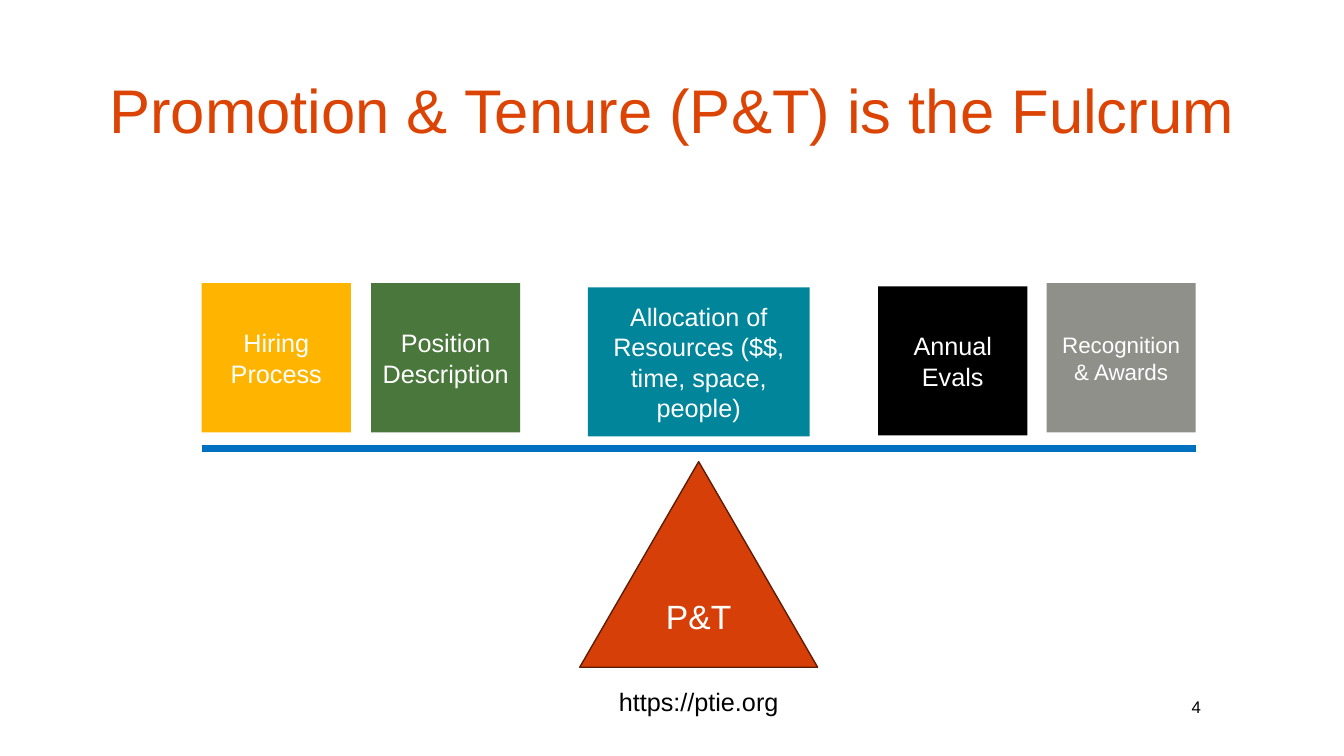
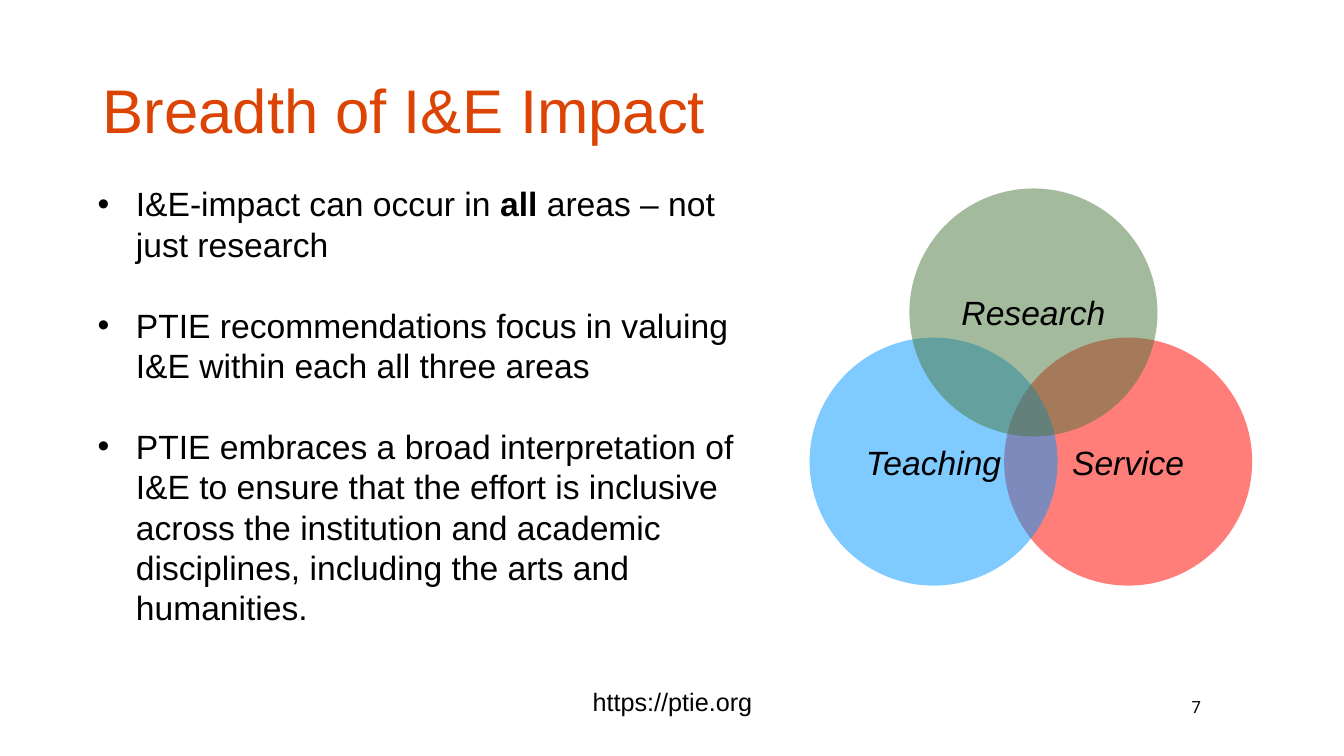
from lxml import etree
from pptx import Presentation
from pptx.dml.color import RGBColor
from pptx.enum import shapes, text
from pptx.oxml import ns
from pptx.util import Emu, Pt

PX = 9144  # 100 px to the inch
FONT = "Arial"
SHAPE = shapes.MSO_SHAPE
ALIGN = text.PP_ALIGN
MIDDLE = text.MSO_ANCHOR.MIDDLE

WHITE = RGBColor(0xFF, 0xFF, 0xFF)
BLACK = RGBColor(0x00, 0x00, 0x00)
TITLE_ORANGE = RGBColor(0xDC, 0x44, 0x05)
FULCRUM_ORANGE = RGBColor(0xD7, 0x3F, 0x09)
FULCRUM_EDGE = RGBColor(0x5E, 0x1C, 0x04)
BEAM_BLUE = RGBColor(0x00, 0x70, 0xC0)
TEAL = RGBColor(0x00, 0x85, 0x9B)
AMBER = RGBColor(0xFF, 0xB5, 0x00)
GREEN = RGBColor(0x4A, 0x77, 0x3C)
GREY = RGBColor(0x8E, 0x90, 0x89)
CORAL = RGBColor(0xFF, 0x7E, 0x79)
SKY = RGBColor(0x00, 0x96, 0xFF)


def px(*lengths):
    return [Emu(length * PX) for length in lengths]


def add_span(para, words, size=18, color=BLACK, font=FONT, bold=False, italic=False):
    span = para.add_run()
    span.text = words
    span.font.size = Pt(size)
    span.font.name = font
    span.font.color.rgb = color
    span.font.bold = bold
    span.font.italic = italic


def add_text(page, place, words, align=ALIGN.LEFT, anchor=text.MSO_ANCHOR.TOP, **style):
    box = page.shapes.add_textbox(*px(*place))
    frame = box.text_frame
    frame.word_wrap = True
    frame.vertical_anchor = anchor
    para = frame.paragraphs[0]
    para.alignment = align
    if words:
        add_span(para, words, **style)
    return frame


def add_figure(page, kind, place, words, fill, edge=None, opacity=100, **style):
    figure = page.shapes.add_shape(kind, *px(*place))
    figure.shadow.inherit = False
    figure.fill.solid()
    figure.fill.fore_color.rgb = fill
    if opacity < 100:
        color = figure.fill._xPr.find(".//" + ns.qn("a:srgbClr"))
        etree.SubElement(color, ns.qn("a:alpha"), val=str(opacity * 1000))
    if edge is None:
        figure.line.fill.background()
    else:
        figure.line.color.rgb = edge
        figure.line.width = Pt(1)
    frame = figure.text_frame
    frame.word_wrap = True
    frame.vertical_anchor = MIDDLE
    para = frame.paragraphs[0]
    para.alignment = ALIGN.CENTER
    add_span(para, words, **style)


def add_beam(page, left, right, y):
    beam = page.shapes.add_connector(shapes.MSO_CONNECTOR.STRAIGHT, *px(left, y, right, y))
    beam.line.color.rgb = BEAM_BLUE
    beam.line.width = Pt(5)
    etree.SubElement(beam._element.spPr, ns.qn("a:effectLst"))


def add_bullets(page, place, items, gap=29, indent=38):
    frame = add_text(page, place, "")
    for index, spans in enumerate(items):
        para = frame.add_paragraph() if index else frame.paragraphs[0]
        if index:
            para.space_before = Pt(gap)
        props = para._p.get_or_add_pPr()
        props.set("marL", str(indent * PX))
        props.set("indent", str(-indent * PX))
        etree.SubElement(props, ns.qn("a:buFont"), typeface=FONT)
        etree.SubElement(props, ns.qn("a:buChar"), char="•")
        for words, bold in spans:
            add_span(para, words, size=24, bold=bold)


def add_page(deck, heading, number, footer_left, align=ALIGN.LEFT, number_font=FONT):
    page = deck.slides.add_slide(deck.slide_layouts[5])
    # Title
    title = page.shapes.title
    title.left, title.top, title.width, title.height = px(92, 40, 1150, 145)
    frame = title.text_frame
    frame.word_wrap = True
    frame.auto_size = text.MSO_AUTO_SIZE.NONE
    frame.vertical_anchor = MIDDLE
    para = frame.paragraphs[0]
    para.alignment = align
    para.line_spacing = 0.9
    add_span(para, heading, size=44, color=TITLE_ORANGE)
    # Footer
    add_text(page, (footer_left, 676, 456, 40), "https://ptie.org", align=ALIGN.CENTER)
    add_text(page, (1172, 681, 69, 40), number, anchor=MIDDLE, size=12, font=number_font)
    return page


def build_fulcrum(deck):
    page = add_page(deck, "Promotion & Tenure (P&T) is the Fulcrum", "4", 465, ALIGN.CENTER)
    # Fulcrum and beam
    add_figure(page, SHAPE.ISOSCELES_TRIANGLE, (575, 458, 236, 204), "P&T",
               FULCRUM_ORANGE, edge=FULCRUM_EDGE, size=24, color=WHITE)
    add_beam(page, 200, 1186, 445)
    # Weights on the beam
    side = 148
    weights = [
        (200, 281, side, "Hiring Process", AMBER, 18),
        (368, 281, side, "Position Description", GREEN, 18),
        (583, 285, 220, "Allocation of Resources ($$, time, space, people)", TEAL, 18),
        (871, 284, side, "Annual Evals", BLACK, 18),
        (1038, 281, side, "Recognition & Awards", GREY, 16),
    ]
    for left, top, width, words, fill, size in weights:
        add_figure(page, SHAPE.RECTANGLE, (left, top, width, side), words, fill,
                   size=size, color=WHITE)


def build_breadth(deck):
    page = add_page(deck, "Breadth of I&E Impact", "7", 439, number_font="Roboto")
    # Overlapping areas
    circle = 246
    areas = [
        (996, 335, "Service", CORAL, 100),
        (803, 335, "Teaching", SKY, 50),
        (902, 187, "Research", GREEN, 50),
    ]
    for left, top, words, fill, opacity in areas:
        add_figure(page, SHAPE.OVAL, (left, top, circle, circle), words, fill,
                   opacity=opacity, size=24, italic=True)
    # Main points
    add_bullets(page, (87, 177, 667, 454), [
        [("I&E-impact can occur in ", False), ("all", True),
         (" areas – not just research", False)],
        [("PTIE recommendations focus in valuing I&E within each all three areas", False)],
        [("PTIE embraces a broad interpretation of I&E to ensure that the effort is "
          "inclusive across the institution and academic disciplines, including the "
          "arts and humanities.", False)],
    ])


def main():
    deck = Presentation()
    deck.slide_width, deck.slide_height = px(1333, 750)
    build_fulcrum(deck)
    build_breadth(deck)
    deck.save("out.pptx")


if __name__ == "__main__":
    main()
